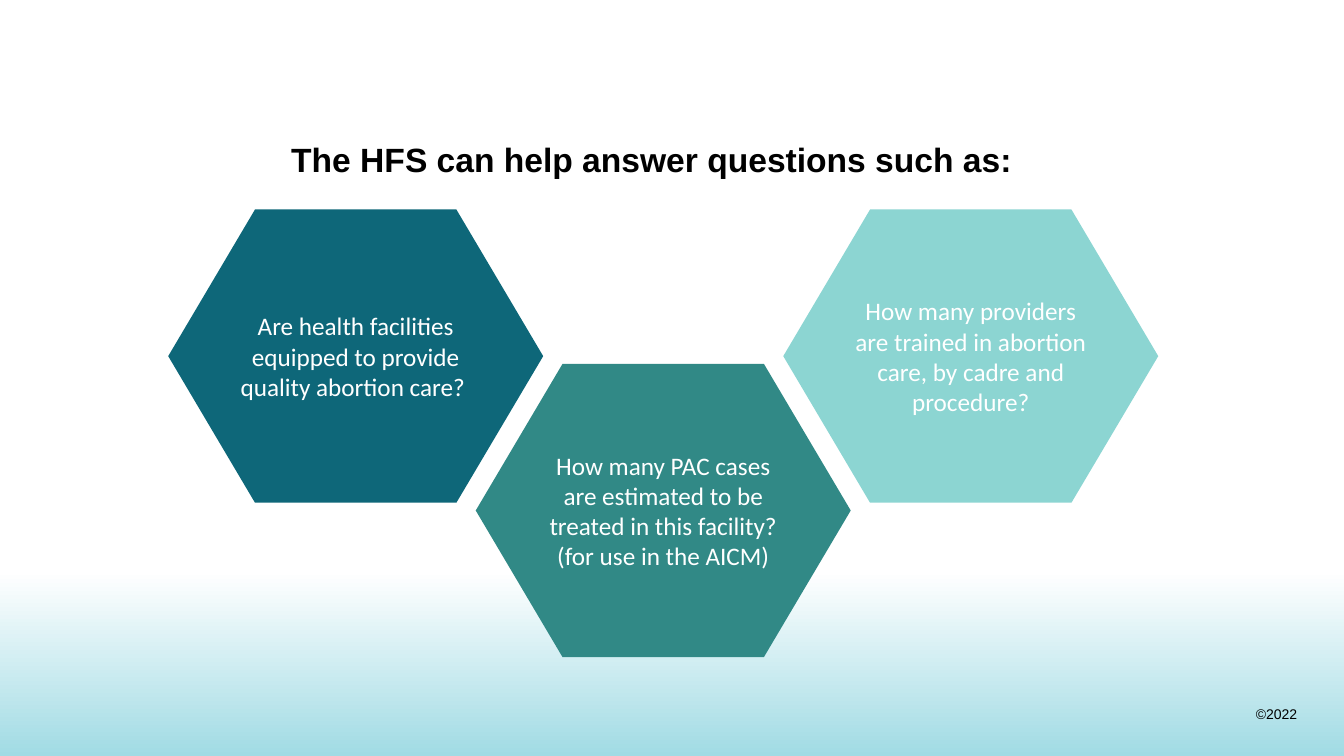
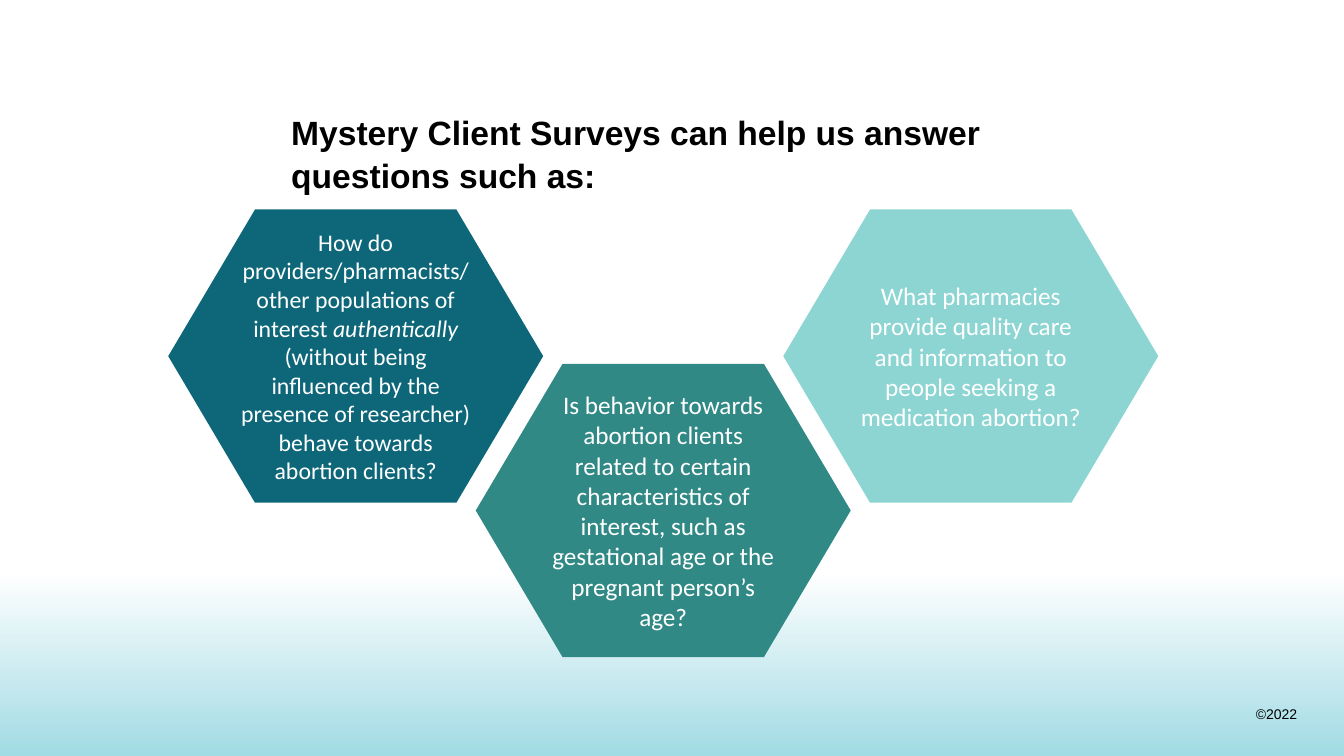
from pptx import Presentation
from pptx.dml.color import RGBColor
from pptx.enum.shapes import MSO_SHAPE
from pptx.enum.text import MSO_ANCHOR, MSO_AUTO_SIZE, PP_ALIGN
from pptx.util import Cm, Pt

RECTANGLE, HEXAGON = MSO_SHAPE.RECTANGLE, MSO_SHAPE.HEXAGON
CENTER, RIGHT = PP_ALIGN.CENTER, PP_ALIGN.RIGHT
MIDDLE = MSO_ANCHOR.MIDDLE
FIT_SHAPE = MSO_AUTO_SIZE.SHAPE_TO_FIT_TEXT
BLANK_LAYOUT = 6

SLIDE_W, SLIDE_H = 33.87, 19.05
BAND_H = 4.65
HEX_W, HEX_H = 9.45, 7.39
HEX_STEP, HEX_DROP = 7.75, 3.89
HEX_SLANT = 0.296

WHITE, BLACK = "FFFFFF", "000000"
BAND_BLUE = "A1DBE4"
DARK_TEAL, GREEN_TEAL, LIGHT_TEAL = "0E6779", "318986", "8CD5D2"
HEX_FILLS = (DARK_TEAL, GREEN_TEAL, LIGHT_TEAL)
TITLE_FONT, QUESTION_FONT = "Arial", "Calibri"

# Each question is its text size and its runs; a run is (text, italic).
SLIDES = [
    {
        "title": "The HFS can help answer questions such as:",
        "title_top": 3.3,
        "questions": [
            (18, [("Are health facilities equipped to provide quality abortion care? ", False)]),
            (18, [("How many PAC cases are estimated to be treated in this facility? "
                   "(for use in the AICM)", False)]),
            (18, [("How many providers are trained in abortion care, "
                   "by cadre and procedure?", False)]),
        ],
    },
    {
        "title": "Mystery Client Surveys can help us answer questions such as:",
        "title_top": 2.62,
        "questions": [
            (17, [("How do providers/pharmacists/other populations of interest ", False),
                  ("authentically ", True),
                  ("(without being influenced by the presence of researcher) "
                   "behave towards abortion clients?", False)]),
            (18, [("Is behavior towards abortion clients related to certain characteristics "
                   "of interest, such as gestational age or the pregnant person’s age?", False)]),
            (18, [("What pharmacies provide quality care and information to people "
                   "seeking a medication abortion?", False)]),
        ],
    },
]


def rgb(hex_string):
    return RGBColor.from_string(hex_string)


def set_font(paragraph, name, size, color, bold=False):
    font = paragraph.font
    font.name = name
    font.size = Pt(size)
    font.bold = bold
    font.color.rgb = rgb(color)


def add_plain_shape(slide, kind, left, top, width, height):
    """Add a preset shape without outline or shadow."""
    shape = slide.shapes.add_shape(kind, Cm(left), Cm(top), Cm(width), Cm(height))
    shape.shadow.inherit = False
    shape.line.fill.background()
    return shape


def add_band(slide, left, top, width, height):
    band = add_plain_shape(slide, RECTANGLE, left, top, width, height)
    band.fill.gradient()
    band.fill.gradient_angle = 270
    for stop, color, position in zip(band.fill.gradient_stops, (WHITE, BAND_BLUE), (0, 1)):
        stop.color.rgb = rgb(color)
        stop.position = position


def add_copyright(slide, left, top, width, height):
    box = slide.shapes.add_textbox(Cm(left), Cm(top), Cm(width), Cm(height))
    frame = box.text_frame
    frame.word_wrap = False
    frame.auto_size = FIT_SHAPE
    notice = frame.paragraphs[0]
    notice.text = "©2022"
    notice.alignment = RIGHT
    set_font(notice, TITLE_FONT, 10, BLACK)


def add_title(slide, text, left, top, width, height):
    box = slide.shapes.add_textbox(Cm(left), Cm(top), Cm(width), Cm(height))
    box.text_frame.word_wrap = True
    title = box.text_frame.paragraphs[0]
    title.text = text
    title.line_spacing = 1.07
    set_font(title, TITLE_FONT, 24, BLACK, bold=True)


def add_hexagon(slide, question, fill, left, top):
    size, runs = question
    hexagon = add_plain_shape(slide, HEXAGON, left, top, HEX_W, HEX_H)
    hexagon.adjustments[0] = HEX_SLANT
    hexagon.fill.solid()
    hexagon.fill.fore_color.rgb = rgb(fill)
    frame = hexagon.text_frame
    frame.word_wrap = True
    frame.vertical_anchor = MIDDLE
    paragraph = frame.paragraphs[0]
    paragraph.alignment = CENTER
    set_font(paragraph, QUESTION_FONT, size, WHITE)
    for text, italic in runs:
        run = paragraph.add_run()
        run.text = text
        if italic:
            run.font.italic = True


def add_honeycomb(slide, questions, left, top):
    """Place hexagons at equal steps, every second one lowered."""
    for column, (question, fill) in enumerate(zip(questions, HEX_FILLS)):
        add_hexagon(slide, question, fill,
                    left + column * HEX_STEP, top + column % 2 * HEX_DROP)


def add_question_slide(prs, content):
    slide = prs.slides.add_slide(prs.slide_layouts[BLANK_LAYOUT])
    add_band(slide, 0, SLIDE_H - BAND_H, SLIDE_W, BAND_H)
    add_copyright(slide, 31.39, 17.65, 1.55, 0.69)
    add_title(slide, content["title"], 7.09, content["title_top"], 21.11, 1.83)
    add_honeycomb(slide, content["questions"], 4.24, 5.28)


def main():
    prs = Presentation()
    prs.slide_width, prs.slide_height = Cm(SLIDE_W), Cm(SLIDE_H)
    for content in SLIDES:
        add_question_slide(prs, content)
    prs.save("out.pptx")


if __name__ == "__main__":
    main()
